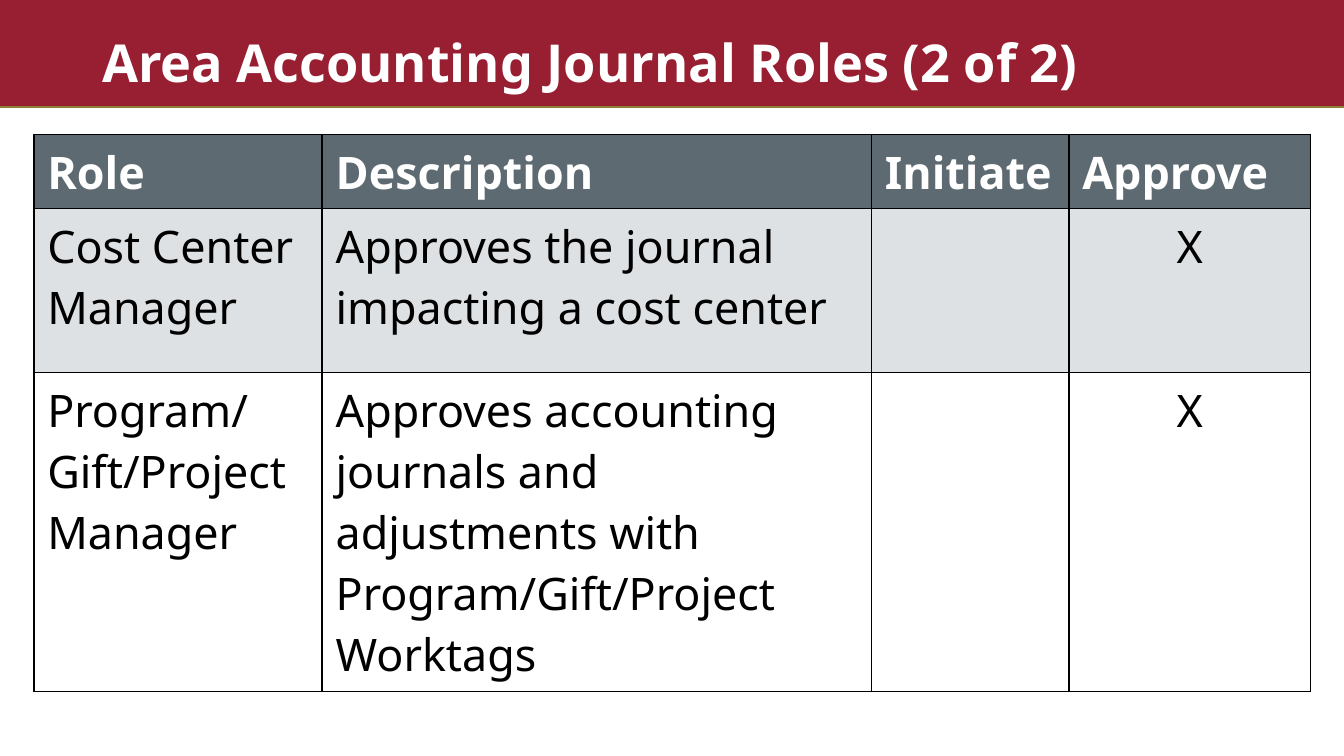
import pptx
import pptx.util
import pptx.dml.color
import pptx.enum.text
import pptx.enum.shapes
import pptx.oxml
import pptx.oxml.ns
import lxml.etree

Cm, Pt = pptx.util.Cm, pptx.util.Pt
PP_ALIGN = pptx.enum.text.PP_ALIGN

COLORS = {
    "crimson": "981E32",
    "gold": "8F7E35",
    "slate": "5E6A71",
    "mist": "DEE1E3",
    "white": "FFFFFF",
    "black": "000000",
}
FONT = "Noto Sans"
COL_WIDTHS = [5.45, 10.38, 3.73, 4.57]
ROW_HEIGHTS = [1.4, 3.1, 6.03]
ROW_FILLS = ["slate", "mist", "white"]
ROLES = [
    ["Role", "Description", "Initiate", "Approve"],
    ["Cost Center Manager", "Approves the journal impacting a cost center", "", "X"],
    ["Program/\nGift/Project Manager",
     "Approves accounting journals and adjustments with Program/Gift/Project Worktags",
     "", "X"],
]


def rgb(name):
    return pptx.dml.color.RGBColor.from_string(COLORS[name])


def set_attrs(obj, values):
    for name, value in values.items():
        setattr(obj, name, value)


def format_text(tf, size, color, bold, align):
    for p in tf.paragraphs:
        p.alignment = align
        for r in p.runs:
            set_attrs(r.font, {"name": FONT, "size": Pt(size), "bold": bold})
            r.font.color.rgb = rgb(color)


def add_band(s, width, height):
    sp = s.shapes.add_shape(pptx.enum.shapes.MSO_SHAPE.RECTANGLE, 0, 0, width, height)
    sp.shadow.inherit = False
    sp.fill.solid()
    sp.fill.fore_color.rgb = rgb("crimson")
    sp.line.fill.background()


def add_rule(s, width, top):
    line = s.shapes.add_connector(pptx.enum.shapes.MSO_CONNECTOR.STRAIGHT, 0, top, width, top)
    line.line.width = Pt(1)
    line.line.color.rgb = rgb("gold")
    lxml.etree.SubElement(line._element.spPr, pptx.oxml.ns.qn("a:effectLst"))


def set_title(s, text):
    sp = s.shapes.title
    set_attrs(sp, {"left": Cm(0.66), "top": Cm(0.56), "width": Cm(24.56), "height": Cm(1.35)})
    tf = sp.text_frame
    tf.text = text
    set_attrs(tf, {
        "margin_left": Cm(1.27),
        "margin_right": Cm(1.27),
        "margin_top": Cm(0.13),
        "margin_bottom": Cm(0.13),
        "vertical_anchor": pptx.enum.text.MSO_ANCHOR.BOTTOM,
        "auto_size": pptx.enum.text.MSO_AUTO_SIZE.SHAPE_TO_FIT_TEXT,
        "word_wrap": True,
    })
    tf.paragraphs[0].line_spacing = 0.9
    format_text(tf, 28, "white", True, PP_ALIGN.LEFT)
    s.shapes._spTree.append(sp._element)


def add_borders(cell):
    tc_pr = cell._tc.get_or_add_tcPr()
    for i, side in enumerate(["lnL", "lnR", "lnT", "lnB"]):
        tc_pr.insert(i, pptx.oxml.parse_xml(
            f'<a:{side} {pptx.oxml.ns.nsdecls("a")} w="{Pt(1)}"><a:solidFill>'
            f'<a:srgbClr val="{COLORS["black"]}"/></a:solidFill></a:{side}>'))


def add_roles_table(s):
    table = s.shapes.add_table(
        len(ROLES), len(COL_WIDTHS), Cm(0.64), Cm(2.54),
        Cm(sum(COL_WIDTHS)), Cm(sum(ROW_HEIGHTS))).table
    set_attrs(table, {"first_row": False, "horz_banding": False})
    for column, width in zip(table.columns, COL_WIDTHS):
        column.width = Cm(width)
    for i, (row, height) in enumerate(zip(table.rows, ROW_HEIGHTS)):
        row.height = Cm(height)
        header = i == 0
        for cell, text in zip(row.cells, ROLES[i]):
            cell.fill.solid()
            cell.fill.fore_color.rgb = rgb(ROW_FILLS[i])
            add_borders(cell)
            if text:
                cell.text_frame.text = text
                format_text(cell.text_frame, 24, "white" if header else "black", header,
                            PP_ALIGN.CENTER if text == "X" else PP_ALIGN.LEFT)


def main():
    prs = pptx.Presentation()
    set_attrs(prs, {"slide_width": Cm(25.4), "slide_height": Cm(14.29)})
    s = prs.slides.add_slide(prs.slide_layouts.get_by_name("Title Only"))
    band_height = Cm(2.03)
    add_band(s, prs.slide_width, band_height)
    add_rule(s, prs.slide_width, band_height)
    set_title(s, "Area Accounting Journal Roles (2 of 2)")
    add_roles_table(s)
    prs.save("out.pptx")


if __name__ == "__main__":
    main()
